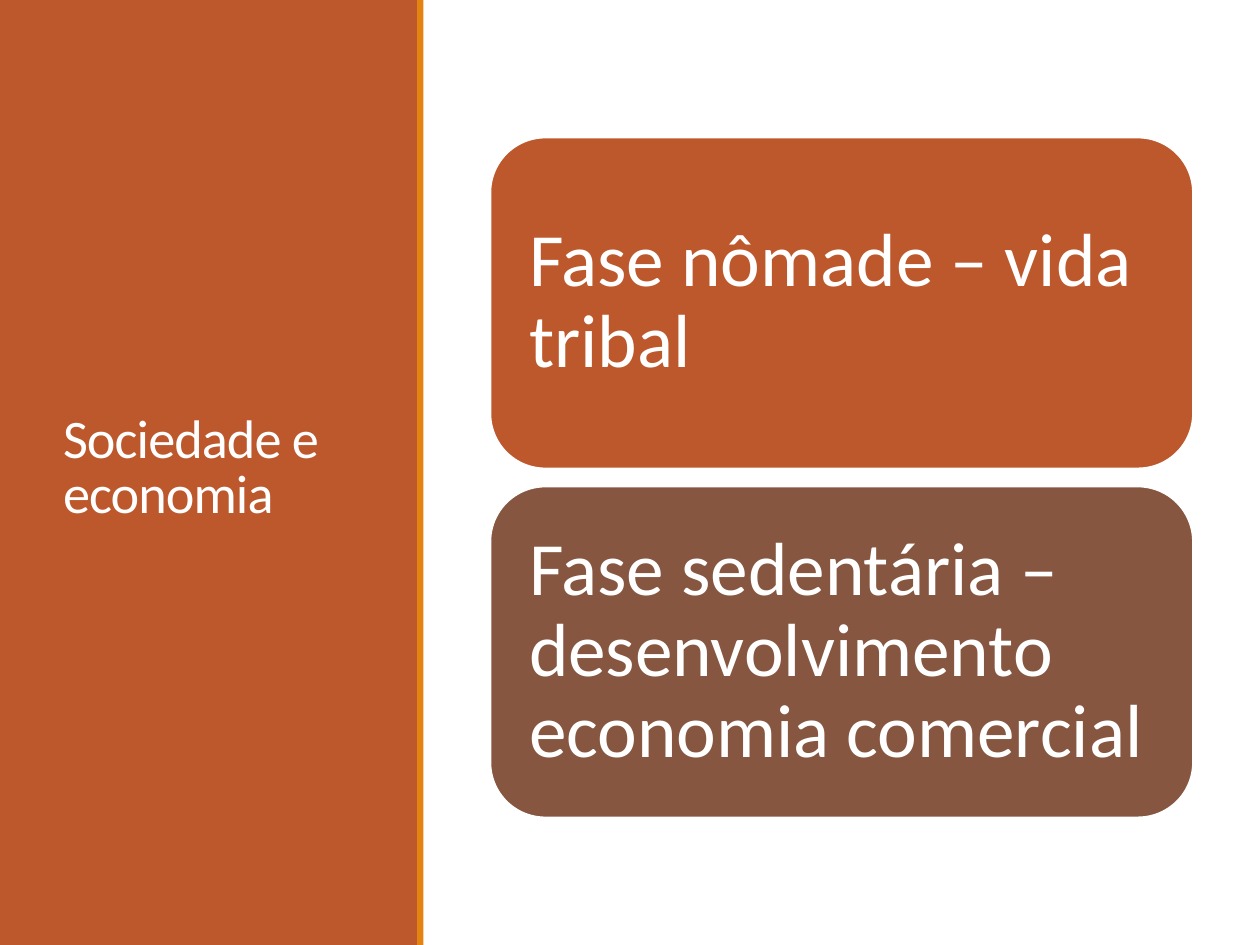
from dataclasses import dataclass

from pptx import Presentation
from pptx import util as u
from pptx.dml.color import RGBColor
from pptx.enum import shapes, text

FONT = "Calibri"
WHITE, RUST, ORANGE, BROWN = "FFFFFF", "BD582C", "E48312", "865640"


@dataclass
class Card:
    label: str
    color: str


CARDS = [
    Card("Fase nômade – vida tribal", RUST),
    Card("Fase sedentária – desenvolvimento economia comercial", BROWN),
]
CARD_LEFT, CARD_TOP, CARD_WIDTH, CARD_HEIGHT = 3.89, 1.09, 5.58, 2.63
CARD_STEP = 2.77


def rgb(color: str) -> RGBColor:
    return RGBColor.from_string(color)


def add_box(slide, kind, left: float, top: float, width: float, height: float, color: str):
    box = slide.shapes.add_shape(
        kind, u.Inches(left), u.Inches(top), u.Inches(width), u.Inches(height))
    box.shadow.inherit = False
    box.fill.solid()
    box.fill.fore_color.rgb = rgb(color)
    box.line.fill.background()
    return box


def write(shape, words: str, size: float, line_spacing: float):
    """Set white, left-aligned, vertically centred text and return its run."""
    frame = shape.text_frame
    frame.text = words
    frame.word_wrap = True
    frame.auto_size = text.MSO_AUTO_SIZE.NONE
    frame.vertical_anchor = text.MSO_ANCHOR.MIDDLE
    para = frame.paragraphs[0]
    para.alignment = text.PP_ALIGN.LEFT
    para.line_spacing = line_spacing
    span = para.runs[0]
    span.font.name = FONT
    span.font.size = u.Pt(size)
    span.font.color.rgb = rgb(WHITE)
    return span


def add_card(slide, card: Card, top: float) -> None:
    box = add_box(slide, shapes.MSO_SHAPE.ROUNDED_RECTANGLE,
                  CARD_LEFT, top, CARD_WIDTH, CARD_HEIGHT, card.color)
    box.line.color.rgb = rgb(WHITE)
    box.line.width = u.Pt(1.25)
    frame = box.text_frame
    frame.margin_left = frame.margin_right = u.Inches(0.18)
    frame.margin_top = frame.margin_bottom = u.Inches(0.18)
    write(box, card.label, 43, 0.9)


def main() -> None:
    deck = Presentation()
    deck.slide_width, deck.slide_height = u.Inches(10), u.Inches(7.5)
    slide = deck.slides.add_slide(deck.slide_layouts[5])

    # Side panel with its accent stripe
    rectangle = shapes.MSO_SHAPE.RECTANGLE
    add_box(slide, rectangle, 0, 0, 3.32, 7.5, RUST)
    add_box(slide, rectangle, 3.31, 0, 0.05, 7.5, ORANGE)

    # Title, brought in front of the panel
    title = slide.shapes.title
    title.left, title.top = u.Inches(0.4), u.Inches(0.57)
    title.width, title.height = u.Inches(2.53), u.Inches(6.31)
    span = write(title, "Sociedade e economia", 31, 0.85)
    span.font._element.set("spc", "-50")
    slide.shapes._spTree.append(title._element)

    # Phase cards
    for index, card in enumerate(CARDS):
        add_card(slide, card, CARD_TOP + index * CARD_STEP)

    deck.save("out.pptx")


if __name__ == "__main__":
    main()
